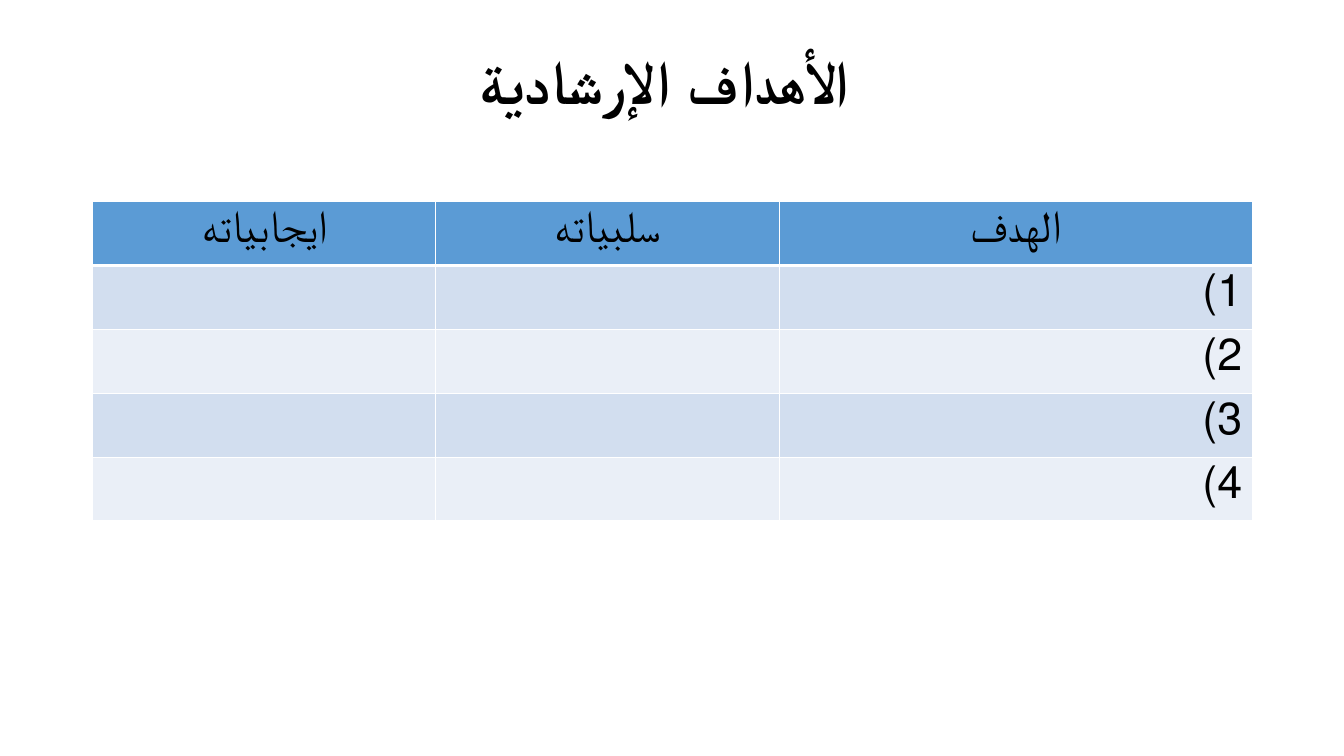
from dataclasses import dataclass

from lxml import etree
from pptx import Presentation, util as u
from pptx.dml.color import RGBColor
from pptx.enum import text
from pptx.oxml.ns import qn


@dataclass(frozen=True)
class Theme:
    font: str = "Calibri"
    ink: str = "000000"
    border: str = "FFFFFF"
    header: str = "5B9BD5"
    bands: tuple = ("D2DEEF", "EAEFF7")
    title_size: int = 44
    table_size: int = 32


THEME = Theme()
TITLE = "الأهداف الإرشادية "
ROWS = [
    ["ايجابياته", "سلبياته", "الهدف"],
    *[["", "", f"{number}) "] for number in range(1, 5)],
]
COLUMN_WIDTHS = (3.4, 3.41, 4.69)
ROW_HEIGHT = 0.41


def write(frame, content, *, size, align, bold=False, rtl=False, spacing=None):
    paragraph = frame.paragraphs[0]
    paragraph.alignment = align
    if rtl:
        paragraph._p.get_or_add_pPr().set("rtl", "1")
    if spacing:
        paragraph.line_spacing = spacing
    if not content:
        return
    run = paragraph.add_run()
    run.text = content
    run.font.name = THEME.font
    run.font.size = u.Pt(size)
    run.font.bold = bold
    run.font.color.rgb = RGBColor.from_string(THEME.ink)


def set_borders(cell, bottom=1, top=1):
    properties = cell._tc.get_or_add_tcPr()
    sides = {"lnL": 1, "lnR": 1, "lnT": top, "lnB": bottom}
    for index, (side, width) in enumerate(sides.items()):
        line = etree.Element(qn(f"a:{side}"), w=str(u.Pt(width)))
        fill = etree.SubElement(line, qn("a:solidFill"))
        etree.SubElement(fill, qn("a:srgbClr"), val=THEME.border)
        properties.insert(index, line)


def add_title(slide, left, top, width, height):
    box = slide.shapes.add_textbox(*map(u.Inches, (left, top, width, height)))
    frame = box.text_frame
    frame.word_wrap = True
    frame.vertical_anchor = text.MSO_ANCHOR.MIDDLE
    write(frame, TITLE, size=THEME.title_size, bold=True,
          align=text.PP_ALIGN.CENTER, spacing=0.9)


def add_goals_table(slide, left, top, width):
    height = ROW_HEIGHT * len(ROWS)
    table = slide.shapes.add_table(
        len(ROWS), len(COLUMN_WIDTHS),
        *map(u.Inches, (left, top, width, height))).table
    for column, share in zip(table.columns, COLUMN_WIDTHS):
        column.width = u.Inches(width * share / sum(COLUMN_WIDTHS))
    for row_index, labels in enumerate(ROWS):
        header = row_index == 0
        table.rows[row_index].height = u.Inches(ROW_HEIGHT)
        color = THEME.header if header else THEME.bands[(row_index - 1) % 2]
        align = text.PP_ALIGN.CENTER if header else text.PP_ALIGN.RIGHT
        for column_index, label in enumerate(labels):
            cell = table.cell(row_index, column_index)
            cell.fill.solid()
            cell.fill.fore_color.rgb = RGBColor.from_string(color)
            set_borders(cell, bottom=3 if header else 1,
                        top=3 if row_index == 1 else 1)
            write(cell.text_frame, label, size=THEME.table_size,
                  align=align, rtl=True)


def main():
    presentation = Presentation()
    presentation.slide_width = u.Inches(13.33)
    presentation.slide_height = u.Inches(7.5)
    slide = presentation.slides.add_slide(presentation.slide_layouts[6])
    add_title(slide, 0.92, 0.4, 11.5, 0.87)
    add_goals_table(slide, 0.92, 2, 11.5)
    presentation.save("out.pptx")


if __name__ == "__main__":
    main()
